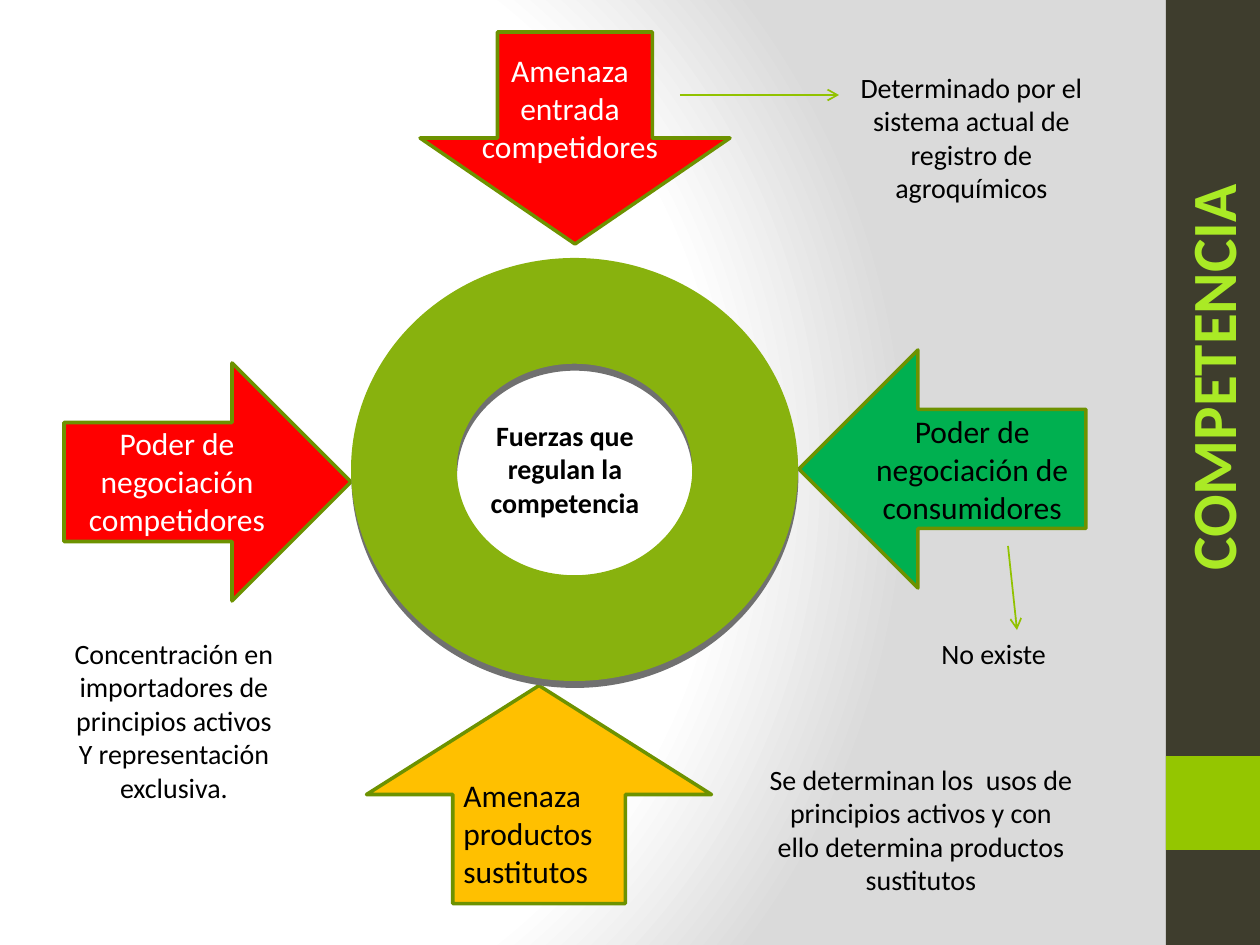
from lxml import etree
from pptx import Presentation
from pptx import util as u
from pptx.dml.color import RGBColor
from pptx.enum import shapes, text
from pptx.oxml import parse_xml
from pptx.oxml.ns import qn

PX = 914400 / 126  # EMU per px
NS = 'xmlns:a="http://schemas.openxmlformats.org/drawingml/2006/main"'

BLACK = RGBColor(0x00, 0x00, 0x00)
WHITE = RGBColor(0xFF, 0xFF, 0xFF)
DARK = RGBColor(0x3E, 0x3D, 0x2D)
LIME = RGBColor(0x94, 0xC6, 0x00)
RING = RGBColor(0x88, 0xB2, 0x0E)
OLIVE = RGBColor(0x6D, 0x92, 0x00)
LINK = RGBColor(0x91, 0xC2, 0x00)
TITLE = RGBColor(0xAA, 0xEA, 0x25)
RED = RGBColor(0xFF, 0x00, 0x00)
GREEN = RGBColor(0x00, 0xB0, 0x50)
AMBER = RGBColor(0xFF, 0xC0, 0x00)

CENTER, LEFT = text.PP_ALIGN.CENTER, text.PP_ALIGN.LEFT
KIND = shapes.MSO_SHAPE

prs = Presentation()
prs.slide_width, prs.slide_height = u.Inches(10), u.Inches(7.5)
s = prs.slides.add_slide(prs.slide_layouts[6])


def add_shape(kind, box, fill, line=None, rotation=0):
    sp = s.shapes.add_shape(kind, *[round(v * PX) for v in box])
    sp.shadow.inherit = False
    sp.rotation = rotation
    sp.fill.solid()
    sp.fill.fore_color.rgb = fill
    if line is None:
        sp.line.fill.background()
    else:
        sp.line.color.rgb = line
        sp.line.width = u.Pt(2)
    return sp


def write(sp, lines, size, color, align=CENTER, bold=False):
    tf = sp.text_frame
    for i, line in enumerate(lines):
        p = tf.add_paragraph() if i else tf.paragraphs[0]
        p.alignment = align
        r = p.add_run()
        r.text = line
        r.font.color.rgb = color
        for name, value in {"name": "Calibri", "size": u.Pt(size), "bold": bold}.items():
            setattr(r.font, name, value)


# Background: radial gradient
s.background.fill.solid()
solid = s.background.fill._xPr.find(qn("a:solidFill"))
solid.getparent().replace(solid, parse_xml(
    f'<a:gradFill {NS} rotWithShape="1"><a:gsLst>'
    '<a:gs pos="0"><a:srgbClr val="FFFFFF"/></a:gs>'
    '<a:gs pos="75000"><a:srgbClr val="FFFFFF"/></a:gs>'
    '<a:gs pos="100000"><a:srgbClr val="DADADA"/></a:gs></a:gsLst>'
    '<a:path path="circle"><a:fillToRect l="20000" t="50000" r="100000" b="50000"/>'
    '</a:path></a:gradFill>'))

# Side band
add_shape(KIND.RECTANGLE, (1166, 0, 94, 945), DARK)
add_shape(KIND.RECTANGLE, (1166, 756, 94, 94), LIME)

# Four forces: one left arrow, turned towards the ring
for box, fill, rotation in [
    ((430, 622, 218, 345), AMBER, 90),
    ((64, 363, 287, 238), RED, 180),
    ((469, -17, 212, 310), RED, 270),
    ((799, 350, 287, 238), GREEN, 0),
]:
    sp = add_shape(KIND.LEFT_ARROW, box, fill, OLIVE, rotation)
sp.text_frame.word_wrap = True
sp.text_frame.vertical_anchor = text.MSO_ANCHOR.MIDDLE
write(sp, ["Poder de negociación de consumidores"], 18, BLACK)

# Central ring with its shadow
ring = add_shape(KIND.DONUT, (351, 258, 447, 423), RING)
ring._element.spPr.find(qn("a:effectLst")).append(parse_xml(
    f'<a:outerShdw {NS} blurRad="0" dist="50800" dir="5220000" rotWithShape="0">'
    '<a:srgbClr val="707070"/></a:outerShdw>'))

# Texts: box, lines, size, colour, format
for box, lines, size, color, fmt in [
    ((461, 412, 208, 115), ["Fuerzas que regulan la competencia"], 16, BLACK, {"bold": True}),
    ((68, 418, 218, 127), ["Poder de negociación competidores"], 18, WHITE, {}),
    ((451, 770, 198, 127), ["Amenaza productos sustitutos"], 18, BLACK, {"align": LEFT}),
    ((461, 45, 218, 127), ["Amenaza entrada competidores"], 18, WHITE, {}),
    ((929, 630, 144, 47), ["No existe"], 16, BLACK, {"align": LEFT}),
    ((833, 64, 277, 149),
     ["Determinado por el sistema actual de registro de agroquímicos"], 16, BLACK, {}),
    ((756, 756, 330, 149),
     ["Se determinan los  usos de principios activos y con ello determina productos sustitutos"],
     16, BLACK, {}),
    ((15, 630, 318, 183),
     ["Concentración en importadores de principios activos", "Y representación exclusiva."],
     16, BLACK, {}),
    ((1004, 333, 416, 89), ["COMPETENCIA"], 36, TITLE, {"bold": True}),
]:
    sp = s.shapes.add_textbox(*[round(v * PX) for v in box])
    sp.text_frame.word_wrap = lines[0] not in ("No existe", "COMPETENCIA")
    sp.text_frame.auto_size = text.MSO_AUTO_SIZE.SHAPE_TO_FIT_TEXT
    write(sp, lines, size, color, **fmt)
sp.rotation = 270  # the title runs up the band

# Thin arrows to the remarks
for ends in [(1008, 546, 1017, 630), (680, 95, 839, 95)]:
    line = s.shapes.add_connector(shapes.MSO_CONNECTOR.STRAIGHT, *[round(v * PX) for v in ends])
    line.line.color.rgb = LINK
    line.line.width = u.Pt(1)
    etree.SubElement(line.line._get_or_add_ln(), qn("a:tailEnd"), type="arrow")
    etree.SubElement(line._element.spPr, qn("a:effectLst"))

prs.save("out.pptx")
